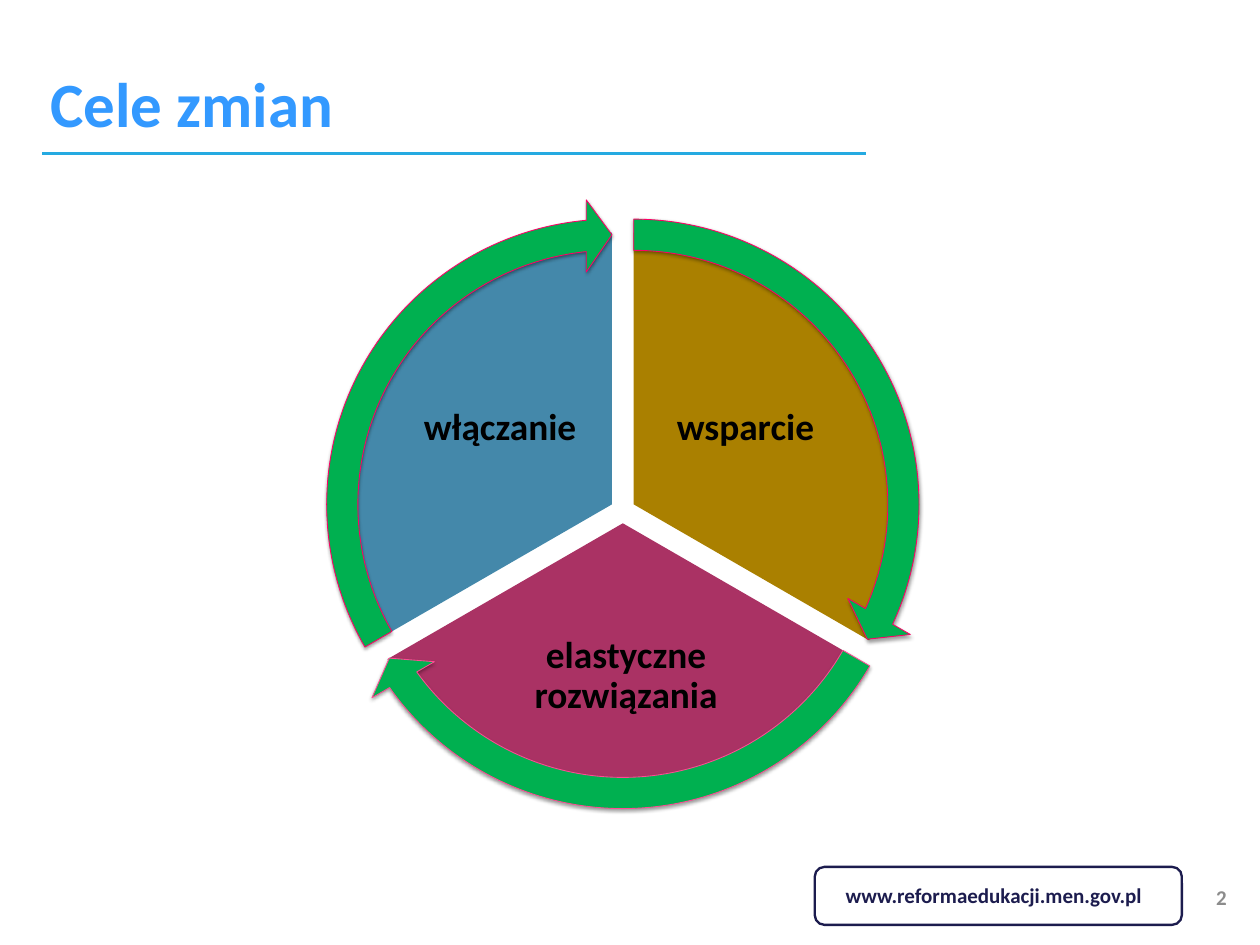
from math import cos, radians, sin

from lxml import etree
from pptx import Presentation
from pptx.dml.color import RGBColor
from pptx.enum.shapes import MSO_CONNECTOR, MSO_SHAPE
from pptx.enum.text import MSO_ANCHOR, PP_ALIGN
from pptx.oxml.ns import qn
from pptx.util import Inches, Pt

PIE, ARROW = MSO_SHAPE.PIE, MSO_SHAPE.CIRCULAR_ARROW
ROUNDED = MSO_SHAPE.ROUNDED_RECTANGLE
STRAIGHT = MSO_CONNECTOR.STRAIGHT
TOP, MIDDLE = MSO_ANCHOR.TOP, MSO_ANCHOR.MIDDLE
LEFT, CENTER = PP_ALIGN.LEFT, PP_ALIGN.CENTER

TITLE = "Cele zmian"
ADDRESS = "www.reformaedukacji.men.gov.pl"
PAGE_NUMBER = "2"

# Goals clockwise from the top: label, sector colour, arrow outline, label box
GOALS = [
    ("wsparcie", "AA8000", "FF0066", (7.72, 4.14, 2.31, 1.93)),
    ("elastyczne rozwiązania", "AA3264", "FF4B94", (5.72, 7.2, 3.47, 1.7)),
    ("włączanie", "4488AA", "FF0066", (4.8, 4.14, 2.31, 1.93)),
]

THEME = {
    "font": "Calibri",
    "title": "3399FF", "rule": "25AAE1", "navy": "1C1C4E",
    "number": "8C8C8C", "label": "000000", "arrow": "00B050",
    "title_size": 54, "label_size": 32, "small_size": 18,
}

CYCLE_CENTER = (7.415, 6.08)
SECTOR_OFFSET = 0.15
SECTOR_SIZE, ARROW_SIZE = 6.47, 7.28
# Angles in units of 100000/60000 degree, as adjustments store them
DEGREE, FULL_TURN, SECTOR_SPAN = 0.6, 216, 72
ARROW_WIDTH, HEAD_LENGTH, HEAD_WIDTH = 0.051, 3.275, 0.059


def color(value):
    return RGBColor.from_string(value)


def add_text(shapes, box, words, size, ink, align=LEFT, anchor=TOP,
             insets=(0.1, 0.05), spacing=None):
    label = shapes.add_textbox(*map(Inches, box))
    frame = label.text_frame
    frame.word_wrap = True
    frame.vertical_anchor = anchor
    frame.margin_left = frame.margin_right = Inches(insets[0])
    frame.margin_top = frame.margin_bottom = Inches(insets[1])
    paragraph = frame.paragraphs[0]
    paragraph.alignment = align
    if spacing:
        paragraph.line_spacing = spacing
    run = paragraph.add_run()
    run.text = words
    run.font.name = THEME["font"]
    run.font.size = Pt(size)
    run.font.bold = True
    run.font.color.rgb = color(ink)


def add_outlined(shapes, kind, box, fill=None, outline=None, width=0):
    shape = shapes.add_shape(kind, *map(Inches, box))
    shape.shadow.inherit = False
    if fill:
        shape.fill.solid()
        shape.fill.fore_color.rgb = color(fill)
    else:
        shape.fill.background()
    if outline:
        shape.line.color.rgb = color(outline)
        shape.line.width = Pt(width)
    else:
        shape.line.fill.background()
    return shape


def drop_shadow(shape):
    """Fill the shape's empty effect list with a soft shadow below it."""
    effects = shape.element.spPr.find(qn("a:effectLst"))
    shadow = etree.SubElement(
        effects, qn("a:outerShdw"), blurRad=str(Pt(3.1)), dist=str(Pt(1.6)),
        dir="5400000", rotWithShape="0")
    ink = etree.SubElement(shadow, qn("a:srgbClr"), val="000000")
    etree.SubElement(ink, qn("a:alpha"), val="38000")


def set_adjustments(shape, values):
    for index, value in enumerate(values):
        shape.adjustments[index] = value


def sector_geometry(index):
    """Start and end angle of a sector and its centre, moved out along its middle."""
    start = (162 + index * SECTOR_SPAN) % FULL_TURN
    middle = radians((start + SECTOR_SPAN / 2) / DEGREE)
    center = (CYCLE_CENTER[0] + SECTOR_OFFSET * cos(middle),
              CYCLE_CENTER[1] + SECTOR_OFFSET * sin(middle))
    return start, (start + SECTOR_SPAN) % FULL_TURN, center


def square(center, size):
    return center[0] - size / 2, center[1] - size / 2, size, size


def add_cycle(shapes):
    for index, (name, fill, _, box) in enumerate(GOALS):
        start, end, center = sector_geometry(index)
        sector = add_outlined(shapes, PIE, square(center, SECTOR_SIZE), fill)
        set_adjustments(sector, (start, end))
        add_text(shapes, box, name, THEME["label_size"], THEME["label"],
                 CENTER, MIDDLE, (0.04, 0.04), 0.9)
    for index, (_, _, outline, _) in enumerate(GOALS):
        start, end, center = sector_geometry(index)
        arrow = add_outlined(shapes, ARROW, square(center, ARROW_SIZE),
                             THEME["arrow"], outline, 0.75)
        set_adjustments(arrow, (ARROW_WIDTH, HEAD_LENGTH, end - HEAD_LENGTH,
                                start, HEAD_WIDTH))
        drop_shadow(arrow)


def add_footer(shapes):
    badge = shapes.add_group_shape().shapes
    add_outlined(badge, ROUNDED, (9.7, 10.32, 4.37, 0.69),
                 outline=THEME["navy"], width=2)
    add_text(badge, (9.97, 10.46, 3.8, 0.4), ADDRESS, THEME["small_size"],
             THEME["navy"], anchor=MIDDLE)
    add_text(shapes, (14.08, 10.38, 0.92, 0.6), PAGE_NUMBER,
             THEME["small_size"], THEME["number"], CENTER, MIDDLE, (0.15, 0.07))


def add_heading(shapes):
    rule = shapes.add_connector(
        STRAIGHT, Inches(0.5), Inches(1.83), Inches(10.31), Inches(1.83))
    rule.line.color.rgb = color(THEME["rule"])
    rule.line.width = Pt(2.25)
    etree.SubElement(rule.element.spPr, qn("a:effectLst"))
    add_text(shapes, (0.5, 0.72, 13.01, 1.01), TITLE,
             THEME["title_size"], THEME["title"])


def main():
    deck = Presentation()
    deck.slide_width, deck.slide_height = Inches(15), Inches(11.25)
    shapes = deck.slides.add_slide(deck.slide_layouts[6]).shapes
    add_footer(shapes)
    add_heading(shapes)
    add_cycle(shapes.add_group_shape().shapes)
    deck.save("out.pptx")


if __name__ == "__main__":
    main()
